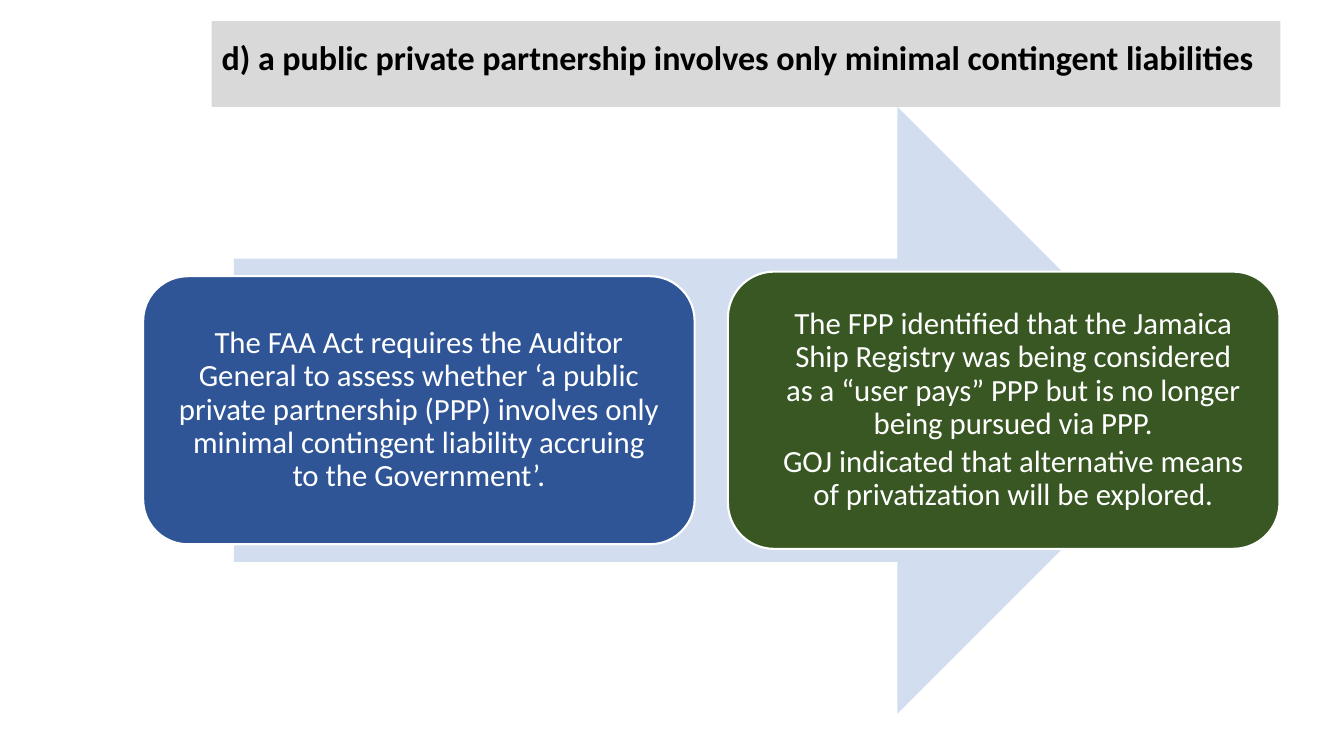
from pptx import Presentation, util as u
from pptx.dml.color import RGBColor
from pptx.enum import shapes, text

HEADING = "d) a public private partnership involves only minimal contingent liabilities"
CARDS = [
    {
        "paragraphs": [
            "The FAA Act requires the Auditor General to assess whether ‘a public private "
            "partnership (PPP) involves only minimal contingent liability accruing to the Government’."
        ],
        "fill": "requirement", "height": 2.66, "indent": 0, "gap": 0,
    },
    {
        "paragraphs": [
            "The FPP identified that the Jamaica Ship Registry was being considered as a "
            "“user pays” PPP but is no longer being pursued via PPP.",
            "GOJ indicated that alternative means of privatization will be explored.",
        ],
        "fill": "finding", "height": 2.75, "indent": 0.19, "gap": 3.3,
    },
]
THEME = {
    "font": "Calibri", "heading_size": 24.3, "card_size": 22,
    "band": "D9D9D9", "arrow": "D2DEEF", "requirement": "2F5597",
    "finding": "385723", "dark": "000000", "light": "FFFFFF",
}
CARD_LEFT, CARD_WIDTH, CARD_PITCH = 1.42, 5.47, 5.8
CARD_INSET = 0.21
ARROW_TOP, ARROW_HEIGHT = 1.06, 6.02


def color(role):
    return RGBColor.from_string(THEME[role])


def add_block(slide, preset, box, fill, outline=None):
    block = slide.shapes.add_shape(preset, *map(u.Inches, box))
    block.shadow.inherit = False
    block.fill.solid()
    block.fill.fore_color.rgb = color(fill)
    if outline:
        block.line.color.rgb = color(outline)
        block.line.width = u.Pt(1.5)
    else:
        block.line.fill.background()
    return block


def write(block, paragraphs, margins, size, ink, align, bold=False, gap=0):
    frame = block.text_frame
    frame.word_wrap = True
    frame.vertical_anchor = text.MSO_ANCHOR.MIDDLE
    (frame.margin_left, frame.margin_top,
     frame.margin_right, frame.margin_bottom) = map(u.Inches, margins)
    for index, words in enumerate(paragraphs):
        paragraph = frame.add_paragraph() if index else frame.paragraphs[0]
        paragraph.text = words
        paragraph.alignment = align
        paragraph.line_spacing = 0.9
        paragraph.space_before = u.Pt(gap if index else 0)
        paragraph.font.name = THEME["font"]
        paragraph.font.size = u.Pt(THEME[size])
        paragraph.font.bold = bold
        paragraph.font.color.rgb = color(ink)


def main():
    deck = Presentation()
    deck.slide_width, deck.slide_height = u.Inches(13.33), u.Inches(7.5)
    slide = deck.slides.add_slide(deck.slide_layouts[6])
    preset = shapes.MSO_SHAPE

    heading = add_block(slide, preset.RECTANGLE, (2.1, 0.21, 10.6, 0.85), "band")
    write(heading, [HEADING], (0.1, 0.05, 0.1, 0.13), "heading_size", "dark",
          text.PP_ALIGN.LEFT, bold=True)

    add_block(slide, preset.RIGHT_ARROW, (2.32, ARROW_TOP, 9.59, ARROW_HEIGHT), "arrow")

    middle = ARROW_TOP + ARROW_HEIGHT / 2
    for column, card in enumerate(CARDS):
        box = (CARD_LEFT + column * CARD_PITCH, middle - card["height"] / 2,
               CARD_WIDTH, card["height"])
        panel = add_block(slide, preset.ROUNDED_RECTANGLE, box, card["fill"], "light")
        margins = (CARD_INSET + card["indent"], CARD_INSET, CARD_INSET, CARD_INSET)
        write(panel, card["paragraphs"], margins, "card_size", "light",
              text.PP_ALIGN.CENTER, gap=card["gap"])

    deck.save("out.pptx")


if __name__ == "__main__":
    main()
